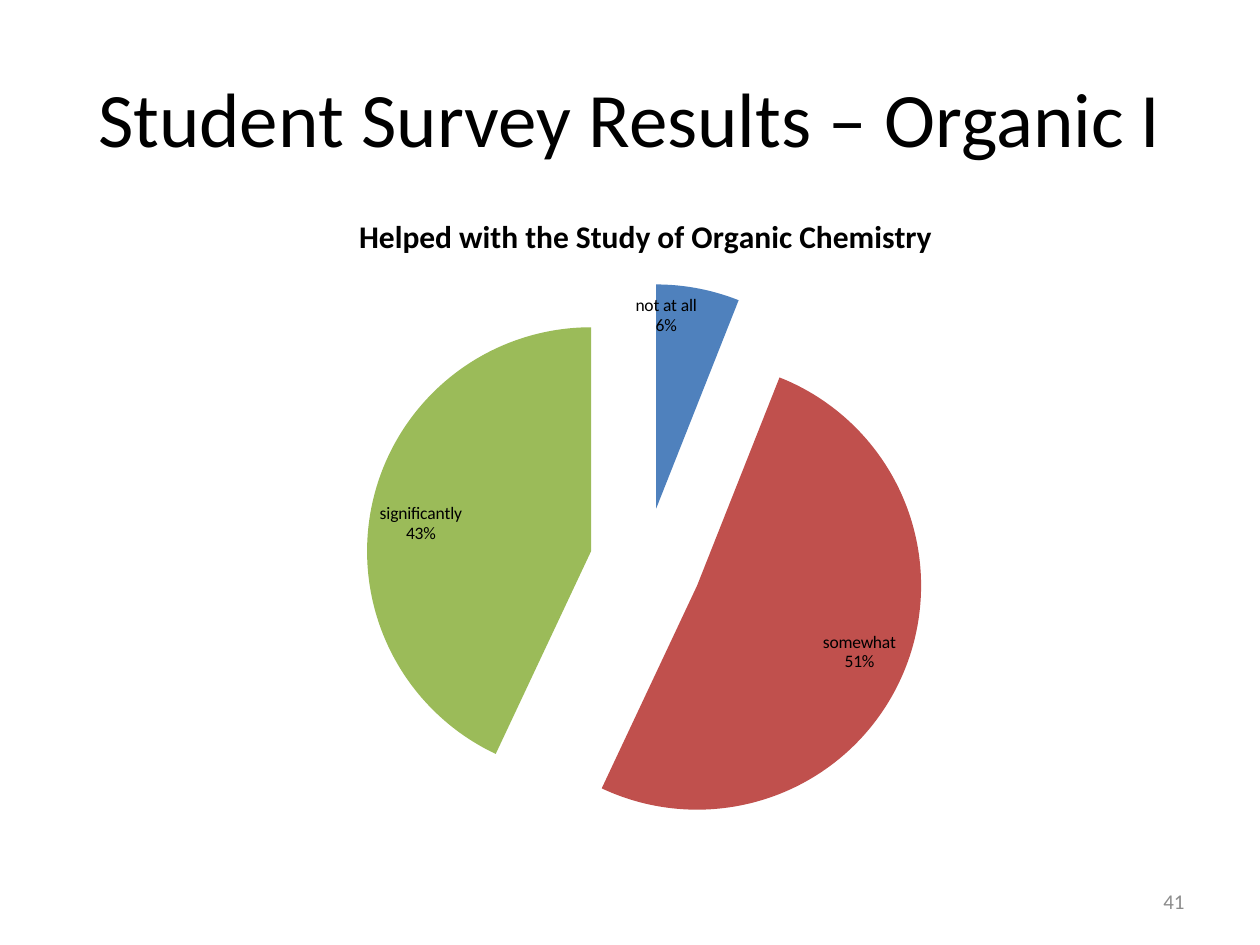
from dataclasses import dataclass

from lxml.etree import SubElement
from pptx import Presentation
from pptx.chart.data import CategoryChartData
from pptx.dml.color import RGBColor
from pptx.enum.chart import XL_CHART_TYPE as ChartType, XL_LABEL_POSITION as LabelPosition
from pptx.enum.text import MSO_ANCHOR as Anchor, PP_ALIGN as Align
from pptx.oxml.ns import qn
from pptx.util import Inches, Pt


@dataclass(frozen=True)
class Theme:
    font: str = "Calibri"
    ink: str = "000000"
    muted: str = "8C8C8C"
    slices: tuple = ("4F81BD", "C0504D", "9BBB59")
    title_size: int = 44
    chart_title_size: int = 18
    number_size: int = 12
    label_size: int = 10


class SlideBuilder:
    columns, rows = 40, 30

    def __init__(self, deck, theme):
        self.theme = theme
        self.page = deck.slides.add_slide(deck.slide_layouts[6])
        self.column = deck.slide_width / self.columns
        self.row = deck.slide_height / self.rows

    def place(self, left, top, width, height):
        return (round(left * self.column), round(top * self.row),
                round(width * self.column), round(height * self.row))

    def style(self, font, size, color, bold=False):
        font.name = self.theme.font
        font.size = Pt(size)
        font.bold = bold
        font.color.rgb = RGBColor.from_string(color)

    def text(self, area, wording, size, color, align):
        frame = self.page.shapes.add_textbox(*self.place(*area)).text_frame
        frame.word_wrap = True
        frame.vertical_anchor = Anchor.MIDDLE
        para = frame.paragraphs[0]
        para.text = wording
        para.alignment = align
        self.style(para.font, size, color)

    def pie(self, area, title, shares, explosion):
        theme = self.theme
        data = CategoryChartData(number_format="0")
        data.categories = list(shares)
        data.add_series("Series 1", list(shares.values()))
        chart = self.page.shapes.add_chart(ChartType.PIE, *self.place(*area), data).chart
        chart.has_legend = False
        self.style(chart.font, theme.label_size, theme.ink)

        chart.has_title = True
        heading = chart.chart_title.text_frame.paragraphs[0]
        heading.text = title
        self.style(heading.font, theme.chart_title_size, theme.ink, bold=True)
        chart.chart_title.include_in_layout = False

        plot = chart.plots[0]
        plot.vary_by_categories = True
        series = plot.series[0]
        for index, color in enumerate(theme.slices):
            fill = series.points[index].format.fill
            fill.solid()
            fill.fore_color.rgb = RGBColor.from_string(color)
        offset = SubElement(series._element, qn("c:explosion"), val=str(explosion))
        series._element.find(qn("c:dPt")).addprevious(offset)

        plot.has_data_labels = True
        labels = plot.data_labels
        labels.show_category_name = True
        labels.show_percentage = True
        labels.show_value = False
        labels.number_format = "0%"
        labels.number_format_is_linked = False
        labels.position = LabelPosition.INSIDE_END
        self.style(labels.font, theme.label_size, theme.ink)
        separator = SubElement(labels._element, qn("c:separator"))
        separator.text = "\n"
        labels._element.find(qn("c:showBubbleSize")).addnext(separator)


def main():
    deck = Presentation()
    deck.slide_width, deck.slide_height = Inches(10), Inches(7.5)
    theme = Theme()
    slide = SlideBuilder(deck, theme)
    slide.text((2, 1.2, 36, 5), "Student Survey Results – Organic I",
               theme.title_size, theme.ink, Align.CENTER)
    slide.pie((3, 6, 35, 21.33), "Helped with the Study of Organic Chemistry",
              {"not at all": 6, "somewhat": 51, "significantly": 43}, explosion=25)
    slide.text((28.67, 27.8, 9.33, 1.6), "41",
               theme.number_size, theme.muted, Align.RIGHT)
    deck.save("out.pptx")


if __name__ == "__main__":
    main()
